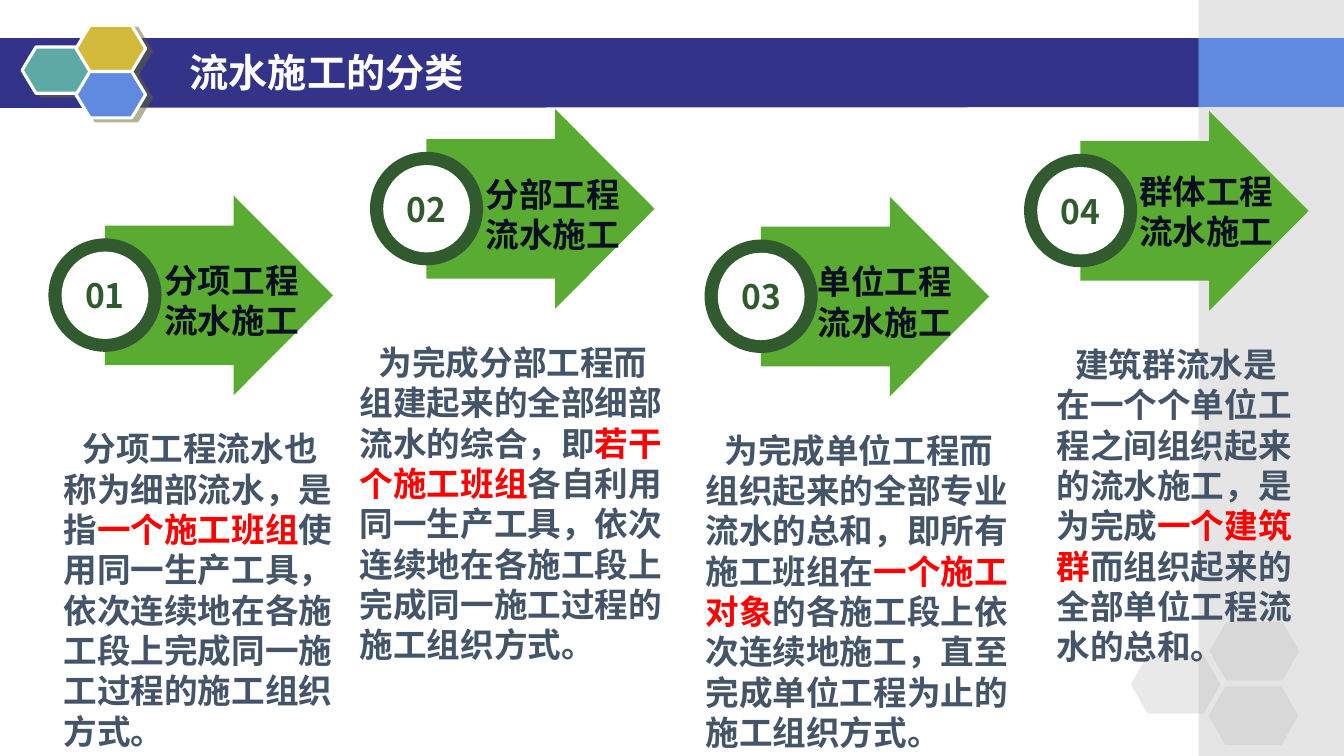
from dataclasses import dataclass

from lxml import etree
from pptx import Presentation
from pptx.dml.color import RGBColor
from pptx.enum.shapes import MSO_SHAPE
from pptx.enum.text import MSO_ANCHOR, PP_ALIGN
from pptx.oxml.ns import qn
from pptx.util import Pt

RECT, HEX, OVAL = MSO_SHAPE.RECTANGLE, MSO_SHAPE.HEXAGON, MSO_SHAPE.OVAL
TOP, MIDDLE = MSO_ANCHOR.TOP, MSO_ANCHOR.MIDDLE
LEFT, CENTER = PP_ALIGN.LEFT, PP_ALIGN.CENTER


@dataclass(frozen=True)
class Theme:
    navy: str = "333389"
    blue: str = "5F8ADF"
    teal: str = "5DA9A5"
    gold: str = "D4BA3A"
    gray: str = "C0C0C0"
    white: str = "FFFFFF"
    shade: str = "666633"
    green: str = "5AAB31"
    dark: str = "315B2F"
    ink: str = "090F21"
    slate: str = "445469"
    red: str = "FF0000"
    sans: str = "DejaVu Sans"
    cjk: str = "Noto Sans CJK SC"
    title: float = 28
    text: float = 24


THEME = Theme()

# Number, arrow corner, label (x, drop, width), body (x, width), body runs
STEPS = [
    ("01", (74.9, 139.7), (117.4, 46, 98), (45.4, 196.6),
     ("分项工程流水施工", "分项工程流水也称为细部流水，是指", "一个施工班组",
      "使用同一生产工具，依次连续地在各施工段上完成同一施工过程的施工组织方式。")),
    ("02", (304.6, 77.9), (347, 46, 106), (257, 224.6),
     ("分部工程流水施工", "为完成分部工程而组建起来的全部细部流水的综合，即", "若干个施工班组",
      "各自利用同一生产工具，依次连续地在各施工段上完成同一施工过程的施工组织方式。")),
    ("03", (543.6, 140.5), (584, 46, 105), (504, 226),
     ("单位工程流水施工", "为完成单位工程而组织起来的全部专业流水的总和，即所有施工班组在",
      "一个施工对象", "的各施工段上依次连续地施工，直至完成单位工程为止的施工组织方式。")),
    ("04", (771.8, 79.3), (813.6, 42.5, 101), (754.6, 179.3),
     ("群体工程流水施工", "建筑群流水是在一个个单位工程之间组织起来的流水施工，是为完成",
      "一个建筑群", "而组织起来的全部单位工程流水的总和。")),
]


def color(code):
    return RGBColor.from_string(code)


def paint(shape, fill, alpha=None, line=None):
    shape.shadow.inherit = False
    shape.fill.solid()
    shape.fill.fore_color.rgb = color(fill)
    if alpha:
        tone = shape.fill._xPr.find(qn("a:solidFill"))[0]
        etree.SubElement(tone, qn("a:alpha"), val=str(alpha * 1000))
    if line:
        shape.line.color.rgb = color(line)
        shape.line.width = Pt(2.25)
    else:
        shape.line.fill.background()
    return shape


def block(slide, kind, box, fill, **look):
    shape = slide.shapes.add_shape(kind, *map(Pt, box))
    return paint(shape, fill, **look)


def outline(slide, dots, fill):
    dots = [(Pt(x), Pt(y)) for x, y in dots]
    form = slide.shapes.build_freeform(*dots[0])
    form.add_line_segments(dots[1:], close=True)
    return paint(form.convert_to_shape(), fill)


def hexagon(slide, box, fill, adj, shade=False, **look):
    shape = block(slide, HEX, box, fill, **look)
    shape.adjustments[0] = adj
    if shade:
        effect = shape._element.spPr.find(qn("a:effectLst"))
        drop = etree.SubElement(effect, qn("a:outerShdw"), dist=str(Pt(4.5)),
                                dir=str(27 * 60000), algn="ctr", rotWithShape="0")
        tone = etree.SubElement(drop, qn("a:srgbClr"), val=THEME.shade)
        etree.SubElement(tone, qn("a:alpha"), val="50000")


def write(shape, runs, size=THEME.text, font=THEME.sans, align=LEFT,
          anchor=TOP, indent=0):
    """Fill a shape with one paragraph of (text, colour) runs."""
    frame = shape.text_frame
    frame.word_wrap = True
    frame.vertical_anchor = anchor
    frame.margin_left = frame.margin_right = 0
    frame.margin_top = frame.margin_bottom = 0
    para = frame.paragraphs[0]
    para.alignment = align
    if indent:
        para._p.get_or_add_pPr().set("indent", str(Pt(indent)))
    for words, tone in runs:
        run = para.add_run()
        run.text = words
        run.font.size = Pt(size)
        run.font.bold = True
        run.font.name = font
        run.font.color.rgb = color(tone)
        etree.SubElement(run.font._element, qn("a:ea"), typeface=font)


def label(slide, box, runs, **form):
    write(slide.shapes.add_textbox(*map(Pt, box)), runs, **form)


def frame(slide):
    # Title band and side panel
    outline(slide, [(0, 27.2), (860, 27.2), (859.5, 76.5), (0, 77)], THEME.navy)
    block(slide, RECT, (856.2, 0, 103.8, 540), THEME.gray, alpha=40)
    block(slide, RECT, (856.2, 27.2, 103.8, 49.2), THEME.blue)

    # Hexagon clusters
    for x, y, fill in [(15.8, 33.6, THEME.teal), (54.3, 18.1, THEME.gold),
                       (54.3, 51.1, THEME.blue)]:
        hexagon(slide, (x, y, 49.7, 33.1), fill, 0.3, shade=True, line=THEME.white)
    for x, y in [(807.8, 468), (864, 444.2), (863.3, 490.3)]:
        hexagon(slide, (x, y, 64, 41.8), THEME.gray, 0.286, alpha=35)

    label(slide, (135.4, 30.2, 696, 41.8), [("流水施工的分类", THEME.white)],
          size=THEME.title, font=THEME.cjk, anchor=MIDDLE)


def step(slide, num, corner, tag, body, words):
    x, y = corner
    name, lead, key, rest = words

    # Arrow
    neck, tip, half, edge = 92, 163, 71.3, 21.4
    base = 2 * half
    outline(slide, [(x, y + edge), (x + neck, y + edge), (x + neck, y),
                    (x + tip, y + half), (x + neck, y + base),
                    (x + neck, y + base - edge), (x, y + base - edge)], THEME.green)

    # Numbered ring
    block(slide, OVAL, (x - 40.3, y + 30.6, 80.8, 81), THEME.dark)
    disc = block(slide, OVAL, (x - 30.9, y + 40, 62, 62.4), THEME.white)
    write(disc, [(num, THEME.dark)], font=THEME.cjk, align=CENTER, anchor=MIDDLE)

    # Name and description
    left, drop, wide = tag
    label(slide, (left, y + drop, wide, 58.3), [(name, THEME.ink)])
    left, wide = body
    label(slide, (left, y + 166.3, wide, 232.6),
          [(lead, THEME.slate), (key, THEME.red), (rest, THEME.slate)], indent=13.5)


def main():
    deck = Presentation()
    deck.slide_width, deck.slide_height = Pt(960), Pt(540)
    slide = deck.slides.add_slide(deck.slide_layouts[6])
    frame(slide)
    for item in STEPS:
        step(slide, *item)
    deck.save("out.pptx")


if __name__ == "__main__":
    main()
